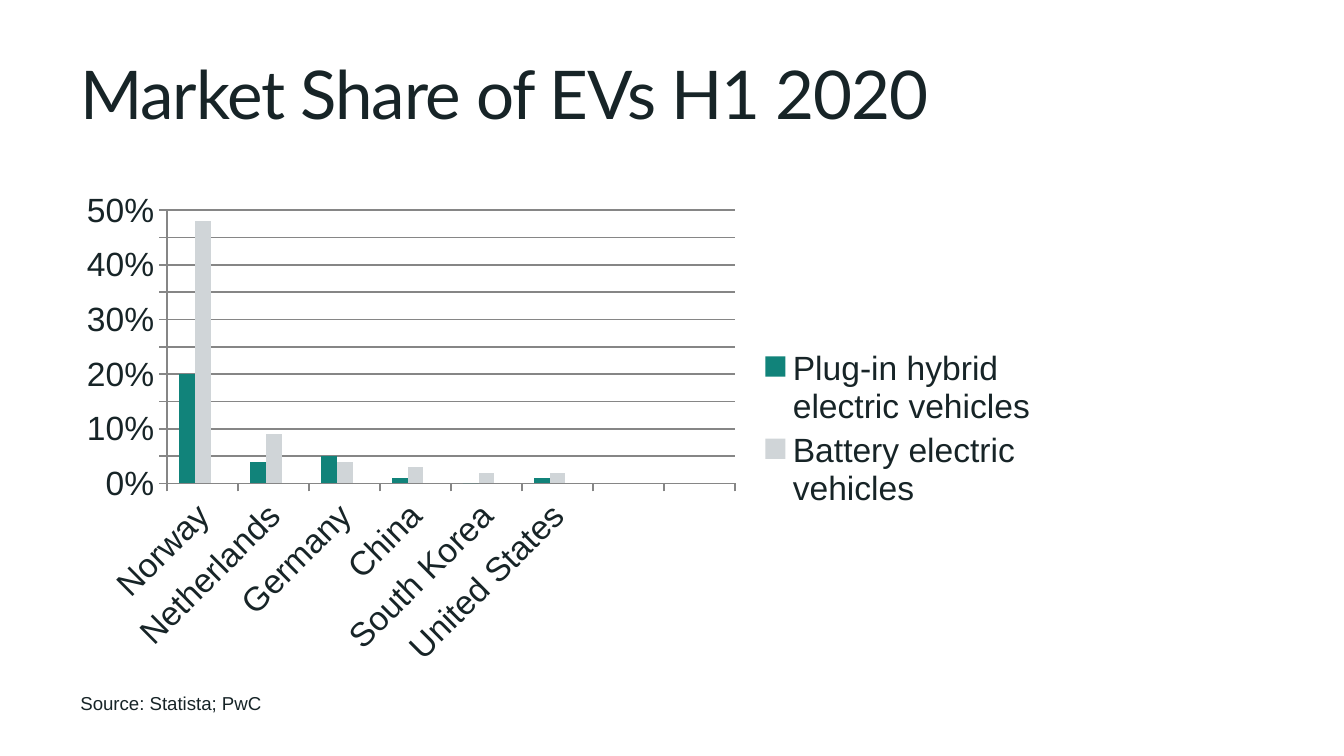
import pptx
import pptx.chart.data
import pptx.dml.color
import pptx.enum.chart
import pptx.enum.text
import pptx.oxml
import pptx.oxml.ns
import pptx.util

COLOURS = {
    "ink": "172427",
    "plug_in": "11837A",
    "battery": "D0D5D8",
    "spare": "9EA7AA",
    "grid": "868686",
}
GRID_COLUMNS = 100
COUNTRIES = ["Norway", "Netherlands", "Germany", "China", "South Korea", "United States", "", ""]
SHARES = [
    ("Plug-in hybrid electric vehicles", "plug_in", [0.2, 0.04, 0.05, 0.01, 0, 0.01, None, None]),
    ("Battery electric vehicles", "battery", [0.48, 0.09, 0.04, 0.03, 0.02, 0.02, None, None]),
    ("Series 3", "spare", [None] * len(COUNTRIES)),
]


class MarketSlide:
    def __init__(self, deck):
        self.cell = deck.slide_width / GRID_COLUMNS
        self.slide = deck.slides.add_slide(deck.slide_layouts[6])

    def colour(self, key):
        return pptx.dml.color.RGBColor.from_string(COLOURS[key])

    def place(self, area):
        return [round(cells * self.cell) for cells in area]

    def style(self, font, size, face):
        font.size = pptx.util.Pt(size)
        font.name = face
        font.color.rgb = self.colour("ink")

    def rule(self, line):
        line.color.rgb = self.colour("grid")
        line.width = pptx.util.Pt(1)

    def text(self, wording, area, size, face, anchor, wrap=True, spacing=None):
        frame = self.slide.shapes.add_textbox(*self.place(area)).text_frame
        frame.text = wording
        frame.word_wrap = wrap
        frame.vertical_anchor = anchor
        if not wrap:
            frame.auto_size = pptx.enum.text.MSO_AUTO_SIZE.SHAPE_TO_FIT_TEXT
        run = frame.paragraphs[0].runs[0]
        self.style(run.font, size, face)
        if spacing is not None:
            run.font._element.set("spc", str(round(spacing * 100)))

    def columns(self, categories, series, area, hidden):
        data = pptx.chart.data.CategoryChartData(number_format="0%")
        data.categories = categories
        for name, _, values in series:
            data.add_series(name, values)
        chart = self.slide.shapes.add_chart(
            pptx.enum.chart.XL_CHART_TYPE.COLUMN_CLUSTERED, *self.place(area), data).chart
        chart.has_title = False
        self.style(chart.font, 18, "Arial")
        plot = chart.plots[0]
        plot.gap_width = 150
        plot.overlap = 0
        plot.vary_by_categories = False
        for bars, (_, key, _) in zip(plot.series, series):
            bars.format.fill.solid()
            bars.format.fill.fore_color.rgb = self.colour(key)
        share_axis = chart.value_axis
        share_axis.maximum_scale = 0.5
        share_axis.has_major_gridlines = True
        share_axis.tick_labels.number_format = "0%"
        share_axis.tick_labels.number_format_is_linked = False
        for axis in (share_axis, chart.category_axis):
            axis.major_tick_mark = pptx.enum.chart.XL_TICK_MARK.OUTSIDE
            self.rule(axis.format.line)
        self.rule(share_axis.major_gridlines.format.line)
        self.legend(chart, hidden)

    def legend(self, chart, hidden):
        chart.has_legend = True
        chart.legend.position = pptx.enum.chart.XL_LEGEND_POSITION.RIGHT
        chart.legend.include_in_layout = False
        entry = pptx.oxml.parse_xml(
            f'<c:legendEntry {pptx.oxml.ns.nsdecls("c")}>'
            f'<c:idx val="{hidden}"/><c:delete val="1"/></c:legendEntry>')
        chart.legend._element.insert(1, entry)


def main():
    deck = pptx.Presentation()
    deck.slide_width = pptx.util.Inches(10)
    deck.slide_height = deck.slide_width * 9 // 16
    market = MarketSlide(deck)
    anchors = pptx.enum.text.MSO_ANCHOR
    market.text("Market Share of EVs H1 2020", (5, 1.3, 74.3, 9.1),
                36, "Lato", anchors.BOTTOM, spacing=-0.6)
    market.columns(COUNTRIES, SHARES, (5, 13.5, 73.3, 36.8), hidden=2)
    market.text("Source: Statista; PwC", (5, 51, 15.6, 2.7),
                10, "Arial", anchors.TOP, wrap=False)
    deck.save("out.pptx")


if __name__ == "__main__":
    main()
